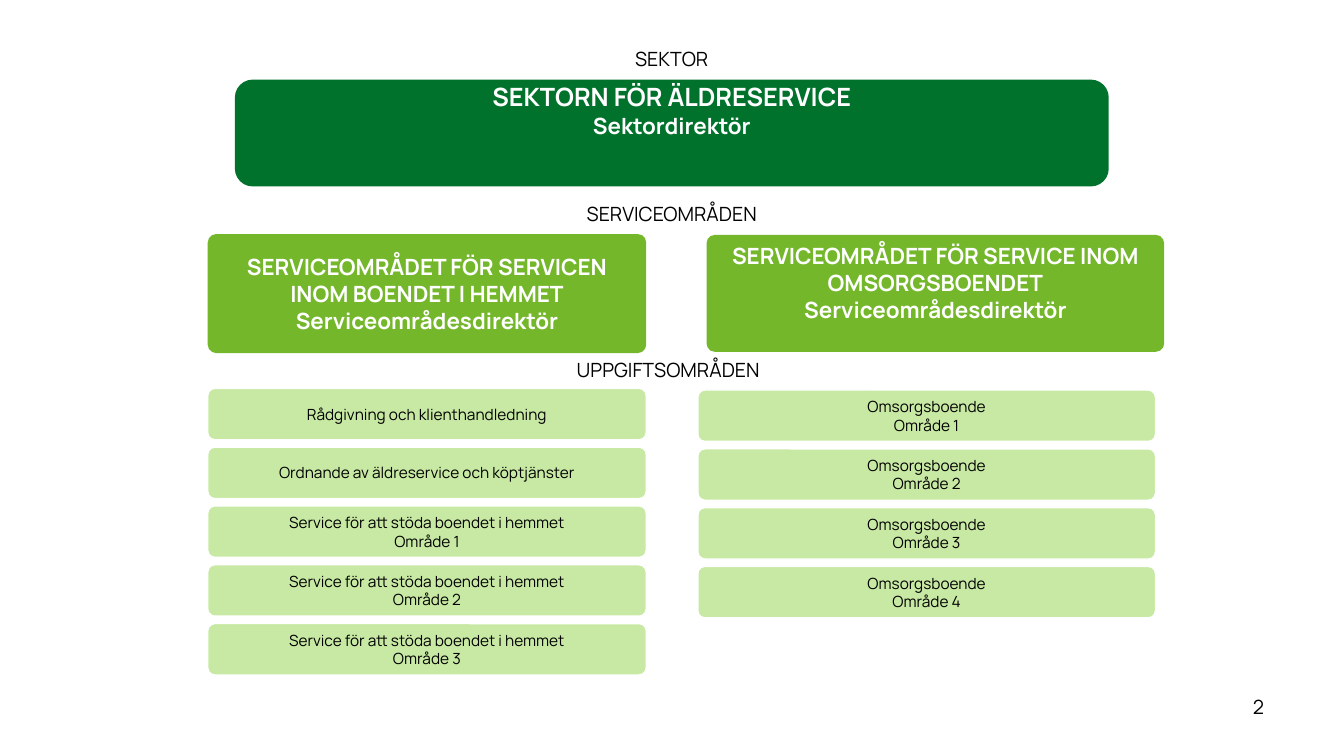
"""Build the organisation chart of the sector for elderly services."""
from pptx import Presentation
from pptx.dml.color import RGBColor
from pptx.enum.shapes import MSO_SHAPE as SHAPE
from pptx.enum.text import MSO_ANCHOR as ANCHOR, MSO_AUTO_SIZE as AUTO_SIZE, PP_ALIGN as ALIGN
from pptx.util import Pt

WHITE = RGBColor(0xFF, 0xFF, 0xFF)
BLACK = RGBColor(0x00, 0x00, 0x00)
DARK_GREEN = RGBColor(0x00, 0x72, 0x2C)
GREEN = RGBColor(0x74, 0xB7, 0x2B)
LIGHT_GREEN = RGBColor(0xC8, 0xE9, 0xA3)

HEADING = {"name": "Manrope", "size": Pt(18), "bold": True, "color": WHITE}
DIRECTOR = {**HEADING, "size": Pt(16)}
LABEL = {"name": "Manrope", "size": Pt(14), "bold": False, "color": BLACK}
TASK = {**LABEL, "size": Pt(11)}

SECTOR = [("SEKTORN FÖR ÄLDRESERVICE", HEADING), ("Sektordirektör", DIRECTOR)]
SERVICE_DIRECTOR = "Serviceområdesdirektör"
HOME_SERVICE = "Service för att stöda boendet i hemmet"
CARE_HOME = "Omsorgsboende"

LABELS = [
    ("SEKTOR", 378.7, 30.2, 202.3),
    ("SERVICEOMRÅDEN", 378.7, 140.4, 202.3),
    ("UPPGIFTSOMRÅDEN", 363.6, 252, 227.5),
]
SERVICE_AREAS = [
    {
        "title": "SERVICEOMRÅDET FÖR SERVICEN INOM BOENDET I HEMMET",
        "box": (148.4, 167.2, 313.2, 85),
        "bottom": 3.6,
        "first_task": (148.4, 277.4, 313.2),
        "tasks": [
            ["Rådgivning och klienthandledning"],
            ["Ordnande av äldreservice och köptjänster"],
            *[[HOME_SERVICE, f"Område {number}"] for number in range(1, 4)],
        ],
    },
    {
        "title": "SERVICEOMRÅDET FÖR SERVICE INOM OMSORGSBOENDET",
        "box": (504.7, 167.8, 326.9, 83.5),
        "bottom": 18.6,
        "first_task": (498.5, 278.6, 326.9),
        "tasks": [[CARE_HOME, f"Område {number}"] for number in range(1, 5)],
    },
]
TASK_HEIGHT, TASK_PITCH = 36.7, 42


def write(shape, lines, align=ALIGN.CENTER):
    """Fill a shape with formatted paragraphs."""
    frame = shape.text_frame
    frame.word_wrap = True
    for index, (text, style) in enumerate(lines):
        paragraph = frame.paragraphs[0] if index == 0 else frame.add_paragraph()
        paragraph.alignment = align
        run = paragraph.add_run()
        run.text = text
        for attribute, value in style.items():
            if attribute == "color":
                run.font.color.rgb = value
            else:
                setattr(run.font, attribute, value)


def add_box(slide, box, fill, lines, corner, bottom=3.6, outline=None):
    """Add a rounded box with centred text."""
    shape = slide.shapes.add_shape(SHAPE.ROUNDED_RECTANGLE, *map(Pt, box))
    shape.shadow.inherit = False
    shape.adjustments[0] = corner
    shape.fill.solid()
    shape.fill.fore_color.rgb = fill
    if outline is None:
        shape.line.fill.background()
    else:
        shape.line.color.rgb = outline
        shape.line.width = Pt(1)
    shape.text_frame.vertical_anchor = ANCHOR.MIDDLE
    shape.text_frame.margin_bottom = Pt(bottom)
    write(shape, lines)


def main():
    """Create and save the slide."""
    presentation = Presentation()
    presentation.slide_width, presentation.slide_height = Pt(960), Pt(540)
    slide = presentation.slides.add_slide(presentation.slide_layouts[6])

    add_box(slide, (167.8, 56.9, 624.2, 76.3), DARK_GREEN, SECTOR, 0.167, bottom=36)
    for area in SERVICE_AREAS:
        lines = [(area["title"], DIRECTOR), (SERVICE_DIRECTOR, DIRECTOR)]
        add_box(slide, area["box"], GREEN, lines, 0.071, area["bottom"])
        left, top, width = area["first_task"]
        for row, task in enumerate(area["tasks"]):
            box = (left, top + row * TASK_PITCH, width, TASK_HEIGHT)
            lines = [(text, TASK) for text in task]
            add_box(slide, box, LIGHT_GREEN, lines, 0.138, outline=WHITE)

    for text, left, top, width in LABELS:
        label = slide.shapes.add_textbox(Pt(left), Pt(top), Pt(width), Pt(24.5))
        label.text_frame.auto_size = AUTO_SIZE.SHAPE_TO_FIT_TEXT
        write(label, [(text, LABEL)])

    page_number = slide.shapes.add_textbox(Pt(887.8), Pt(492.5), Pt(47.5), Pt(28.8))
    write(page_number, [("2", LABEL)], ALIGN.LEFT)
    presentation.save("out.pptx")


if __name__ == "__main__":
    main()
